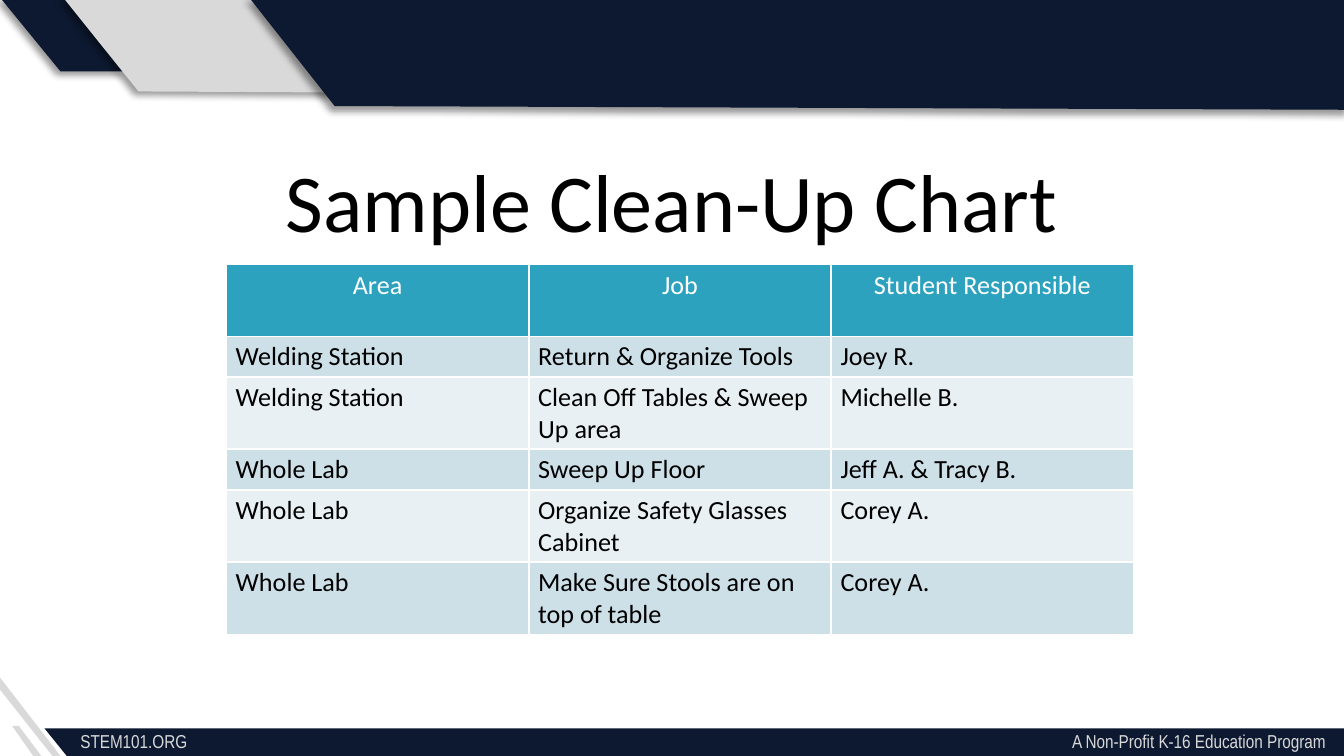
from lxml import etree
from pptx import Presentation
from pptx import util as u
from pptx.dml.color import RGBColor
from pptx.enum import text
from pptx.oxml import parse_xml
from pptx.oxml.ns import nsdecls, qn

Pt = u.Pt
NAVY = RGBColor(0x0C, 0x19, 0x30)
GRAY = RGBColor(0xD9, 0xD9, 0xD9)
TEAL = RGBColor(0x2D, 0xA2, 0xBF)
BAND_DARK = RGBColor(0xCD, 0xE0, 0xE8)
BAND_LIGHT = RGBColor(0xE8, 0xF0, 0xF4)
WHITE = RGBColor(0xFF, 0xFF, 0xFF)
BLACK = RGBColor(0, 0, 0)

CLEAN_UP_ROWS = [
    ("Area", "Job", "Student Responsible"),
    ("Welding Station", "Return & Organize Tools", "Joey R."),
    ("Welding Station", "Clean Off Tables & Sweep Up area", "Michelle B."),
    ("Whole Lab", "Sweep Up Floor", "Jeff A. & Tracy B."),
    ("Whole Lab", "Organize Safety Glasses Cabinet", "Corey A."),
    ("Whole Lab", "Make Sure Stools are on top of table", "Corey A."),
]
ROW_HEIGHTS = [38.4, 21.9, 38.4, 21.9, 38.4, 38.4]


def write(tf, words, size, color, font="Calibri", align=text.PP_ALIGN.LEFT, tab=None):
    p = tf.paragraphs[0]
    if tab:
        tabs = etree.SubElement(p._p.get_or_add_pPr(), qn("a:tabLst"))
        etree.SubElement(tabs, qn("a:tab"), pos=str(Pt(tab)), algn="r")
    p.alignment = align
    r = p.add_run()
    r.text = words
    r.font.size = Pt(size)
    r.font.name = font
    r.font.color.rgb = color


def add_text(slide, box, words, anchor=text.MSO_ANCHOR.TOP, **style):
    tf = slide.shapes.add_textbox(*map(Pt, box)).text_frame
    tf.word_wrap = True
    tf.vertical_anchor = anchor
    write(tf, words, **style)


def add_polygon(slide, box, points, color, shadow=False):
    left, top = box[:2]
    corners = [(Pt(left + x), Pt(top + y)) for x, y in points]
    builder = slide.shapes.build_freeform(*corners[0])
    builder.add_line_segments(corners[1:], close=True)
    sp = builder.convert_to_shape()
    sp.fill.solid()
    sp.fill.fore_color.rgb = color
    sp.line.fill.background()
    sp.shadow.inherit = False
    if shadow:
        effects = sp._element.spPr.find(qn("a:effectLst"))
        effects.append(parse_xml(
            f'<a:outerShdw {nsdecls("a")} blurRad="{Pt(4)}" dist="{Pt(3)}" '
            'dir="8100000" algn="tr" rotWithShape="0"><a:srgbClr val="000000">'
            '<a:alpha val="40000"/></a:srgbClr></a:outerShdw>'))


def add_header_bands(slide, box):
    bands = [
        ([(32.4, 39.6), (0, 0), (34.6, 0), (67, 39.6)], NAVY),
        ([(74.2, 50.4), (33.8, 0), (146.9, 0), (186.5, 51)], GRAY),
        ([(179.3, 58.2), (133.9, 0.6), (721.4, 0.6), (722.9, 60.2)], NAVY),
    ]
    for points, color in bands:
        add_polygon(slide, box, points, color, shadow=True)


def add_footer(slide, box):
    left, top, width, height = box
    stripes = [
        ([(22.3, 42.2), (18, 42.2), (6.5, 25.9), (10.1, 25.9)], GRAY),
        ([(32.4, 42), (28.1, 42), (0, 6.5), (0, 0)], GRAY),
        ([(724.3, 43.9), (36.7, 43.2), (23.8, 27.2), (725, 27.2)], NAVY),
    ]
    for points, color in stripes:
        add_polygon(slide, box, points, color)
    add_text(slide, (left + 36, top + 24.4, width - 36, 19.4),
             "STEM101.ORG\tA Non-Profit K-16 Education Program",
             size=10, color=GRAY, font="Arial Narrow", tab=667)


def style_cell(cell, color):
    cell.margin_left = cell.margin_right = Pt(5)
    cell.margin_top = cell.margin_bottom = Pt(2.5)
    tcPr = cell._tc.get_or_add_tcPr()
    for side in "LRTB":
        tcPr.append(parse_xml(
            f'<a:ln{side} {nsdecls("a")} w="{Pt(1)}"><a:solidFill>'
            f'<a:srgbClr val="{WHITE}"/></a:solidFill></a:ln{side}>'))
    cell.fill.solid()
    cell.fill.fore_color.rgb = color


def add_clean_up_table(slide, box):
    table = slide.shapes.add_table(len(CLEAN_UP_ROWS), 3, *map(Pt, box)).table
    for column in table.columns:
        column.width = Pt(box[2] / 3)
    for i, (words, height) in enumerate(zip(CLEAN_UP_ROWS, ROW_HEIGHTS)):
        table.rows[i].height = Pt(height)
        header = i == 0
        fill = TEAL if header else BAND_DARK if i % 2 else BAND_LIGHT
        for j, word in enumerate(words):
            cell = table.cell(i, j)
            style_cell(cell, fill)
            write(cell.text_frame, word, size=14,
                  color=WHITE if header else BLACK,
                  align=text.PP_ALIGN.CENTER if header else text.PP_ALIGN.LEFT)


def main():
    prs = Presentation()
    prs.slide_width, prs.slide_height = Pt(720), Pt(405)
    slide = prs.slides.add_slide(prs.slide_layouts[6])
    add_header_bands(slide, (0, -1.4, 720, 60))
    add_footer(slide, (0, 363, 720, 42))
    add_clean_up_table(slide, (121.3, 141.8, 486, sum(ROW_HEIGHTS)))
    add_text(slide, (36, 62, 648, 90), "Sample Clean-Up Chart",
             anchor=text.MSO_ANCHOR.MIDDLE, size=44, color=BLACK,
             align=text.PP_ALIGN.CENTER)
    prs.save("out.pptx")


if __name__ == "__main__":
    main()
